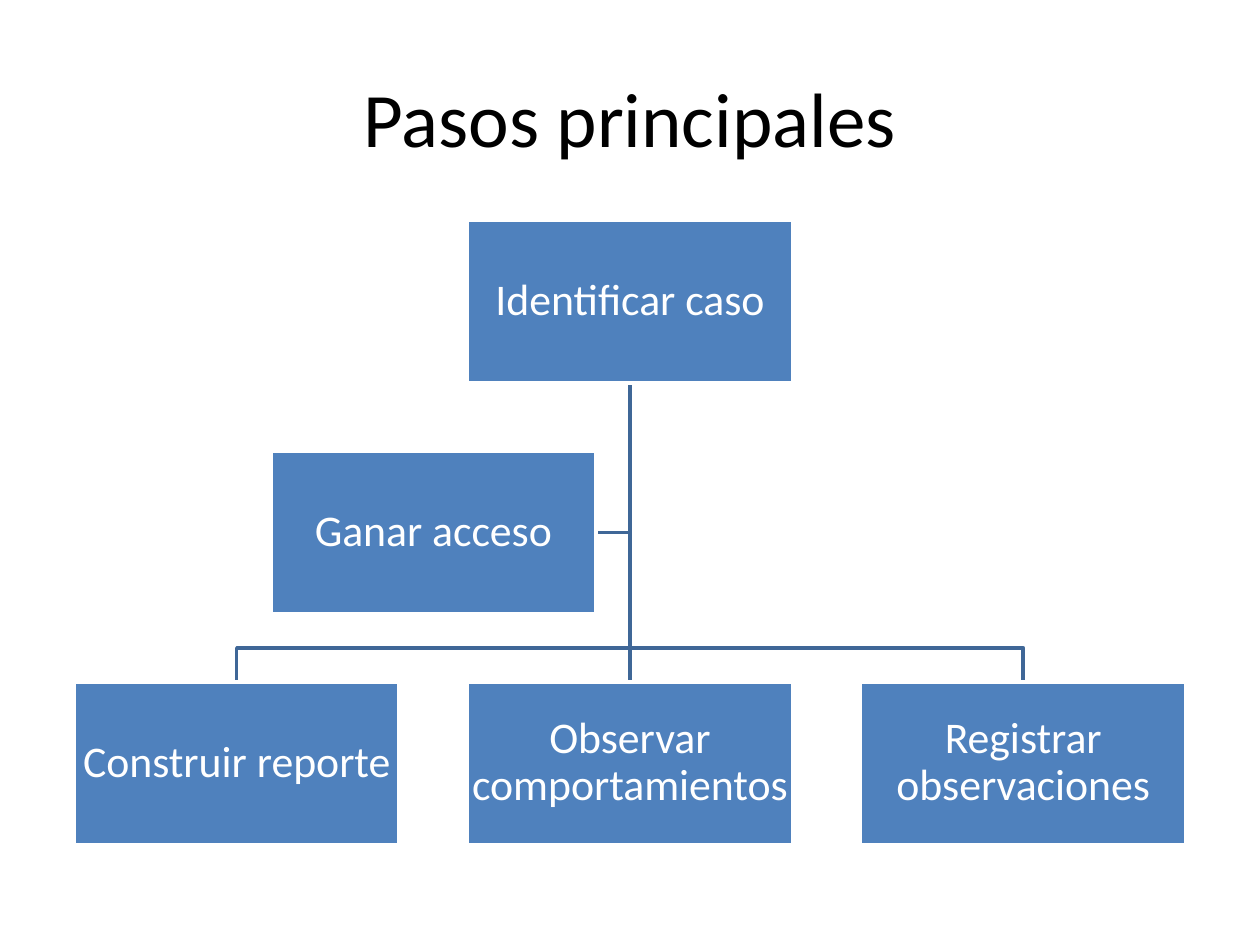
from lxml import etree
from pptx import Presentation
from pptx.dml.color import RGBColor
from pptx.enum.shapes import MSO_CONNECTOR, MSO_SHAPE
from pptx.enum.text import MSO_ANCHOR, PP_ALIGN
from pptx.oxml.ns import qn
from pptx.util import Pt

RECT = MSO_SHAPE.RECTANGLE
STRAIGHT = MSO_CONNECTOR.STRAIGHT
MIDDLE = MSO_ANCHOR.MIDDLE
CENTER = PP_ALIGN.CENTER

FONT = "Calibri"
COLORS = {"box": "4F81BD", "link": "3F6797", "white": "FFFFFF", "black": "000000"}
STEPS = ["Construir reporte", "Observar comportamientos", "Registrar observaciones"]


def color(name):
    return RGBColor.from_string(COLORS[name])


def write(frame, text, size, ink, inset=None, spacing=None):
    """Fill a text frame with one centred paragraph."""
    frame.word_wrap = True
    frame.vertical_anchor = MIDDLE
    if inset is not None:
        frame.margin_left = frame.margin_right = Pt(inset)
        frame.margin_top = frame.margin_bottom = Pt(inset)
    para = frame.paragraphs[0]
    para.alignment = CENTER
    para.line_spacing = spacing
    run = para.add_run()
    run.text = text
    run.font.name = FONT
    run.font.size = Pt(size)
    run.font.color.rgb = color(ink)


def outline(shape, ink):
    shape.line.color.rgb = color(ink)
    shape.line.width = Pt(2)


def node(slide, text, left, top, width, height):
    box = slide.shapes.add_shape(RECT, Pt(left), Pt(top), Pt(width), Pt(height))
    box.shadow.inherit = False
    box.fill.solid()
    box.fill.fore_color.rgb = color("box")
    outline(box, "white")
    write(box.text_frame, text, 25, "white", inset=1.25, spacing=0.9)


def bent(slide, points):
    """Draw an open line through the given points."""
    first, *rest = [(Pt(x), Pt(y)) for x, y in points]
    pen = slide.shapes.build_freeform(*first)
    pen.add_line_segments(rest, close=False)
    link = pen.convert_to_shape()
    link.shadow.inherit = False
    link.fill.background()
    outline(link, "link")


def straight(slide, x, top, end):
    link = slide.shapes.add_connector(STRAIGHT, Pt(x), Pt(top), Pt(x), Pt(end))
    outline(link, "link")
    etree.SubElement(link._element.spPr, qn("a:effectLst"))


def heading(slide, left, top, width, height):
    title = slide.shapes.title
    title.left, title.top = Pt(left), Pt(top)
    title.width, title.height = Pt(width), Pt(height)
    write(title.text_frame, "Pasos principales", 44, "black")


def chart(slide, left, top, width, height):
    """Root, one assistant at its left, and a row of steps below."""
    # Gaps are 21% of a box, and boxes are twice as wide as high
    wide = width / (3 + 2 * 0.21)
    gap = 0.21 * wide
    high = (height - 2 * gap) / 3
    mid = left + width / 2
    foot = top + high
    side = foot + gap
    base = side + high + gap
    fork = base - gap / 2
    edge = mid - gap / 2

    # Links, behind the boxes
    bent(slide, [(mid, foot), (mid, side + high / 2), (edge, side + high / 2)])
    for x in (mid - wide - gap, mid + wide + gap):
        bent(slide, [(mid, foot), (mid, fork), (x, fork), (x, base)])
    straight(slide, mid, foot, base)

    # Boxes
    node(slide, "Identificar caso", mid - wide / 2, top, wide, high)
    node(slide, "Ganar acceso", edge - wide, side, wide, high)
    for i, step in enumerate(STEPS):
        node(slide, step, left + i * (wide + gap), base, wide, high)


def main():
    deck = Presentation()
    deck.slide_width, deck.slide_height = Pt(720), Pt(540)
    slide = deck.slides.add_slide(deck.slide_layouts[5])
    heading(slide, 36, 21.6, 648, 90)
    chart(slide, 42.4, 126, 635.2, 356.5)
    deck.save("out.pptx")


if __name__ == "__main__":
    main()
